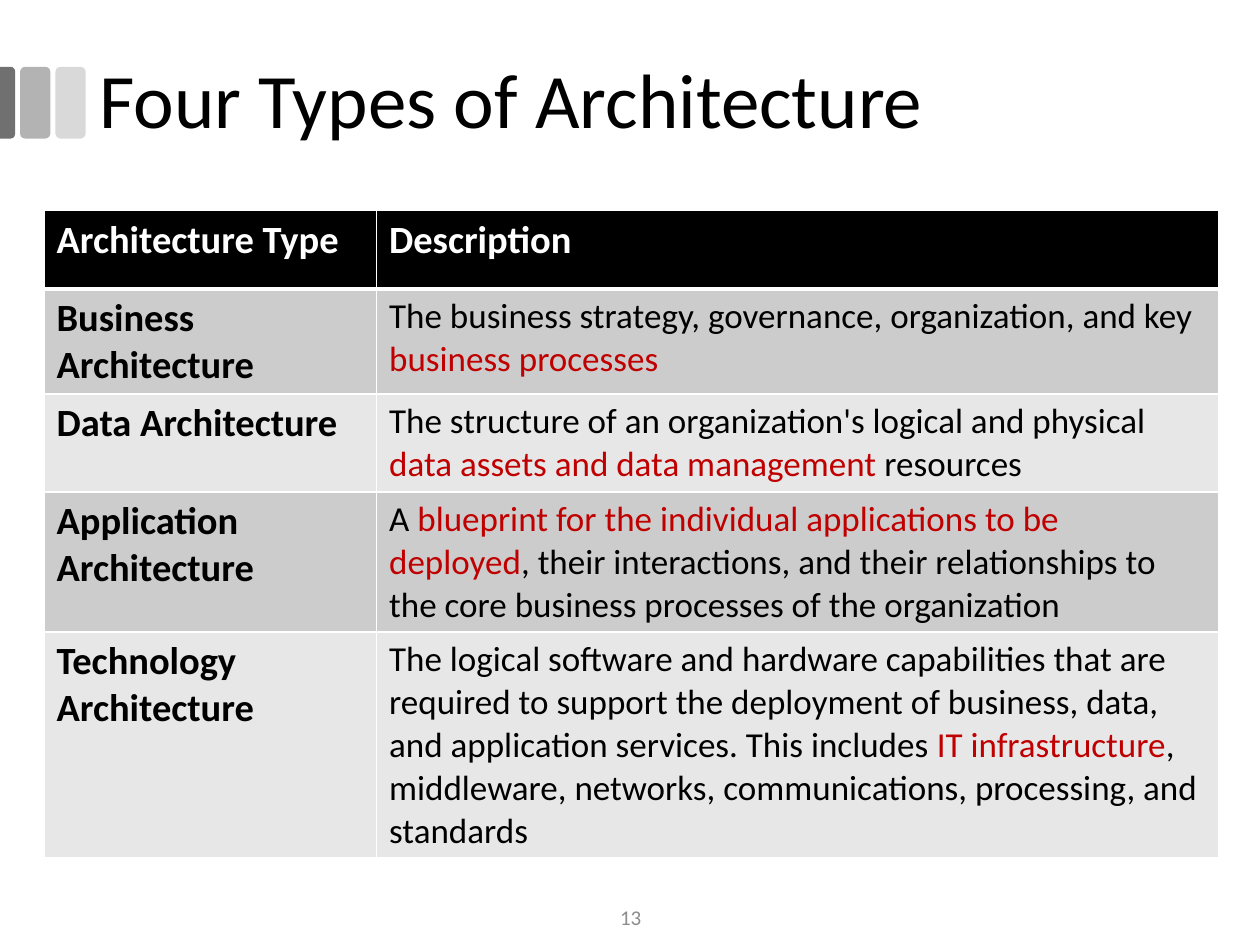
from lxml import etree
from pptx import Presentation, util as u
from pptx.dml.color import RGBColor
from pptx.enum import shapes, text
from pptx.oxml.ns import qn

TITLE = "Four Types of Architecture"
PAGE = "13"
HEADER = ("Architecture Type", "Description")
ARCHITECTURES = [
    ("Business Architecture", 60, [
        ("The business strategy, governance, organization, and key ", "ink"),
        ("business processes", "accent")]),
    ("Data Architecture", 56, [
        ("The structure of an organization's logical and physical ", "ink"),
        ("data assets and data management ", "accent"),
        ("resources", "ink")]),
    ("Application Architecture", 80, [
        ("A ", "ink"),
        ("blueprint for the individual applications to be deployed", "accent"),
        (", their interactions, and their relationships to the core business "
         "processes of the organization", "ink")]),
    ("Technology Architecture", 129, [
        ("The logical software and hardware capabilities that are required to support "
         "the deployment of business, data, and application services. This includes ", "ink"),
        ("IT infrastructure", "accent"),
        (", middleware, networks, communications, processing, and standards", "ink")]),
]
THEME = {
    "font": "Calibri",
    "colours": {"ink": "000000", "paper": "FFFFFF", "accent": "C00000", "page": "8C8C8C",
                "band0": "CCCCCC", "band1": "E7E7E7",
                "light": "D9D9D9", "middle": "B3B3B3", "dark": "707070"},
    "sizes": {"title": 44, "heading": 22, "body": 20, "page": 12},
}
HEADER_HEIGHT = 45
COLUMNS = (190, 481)
TABLE_LEFT, TABLE_TOP = 25.2, 120.2
TAB_TOP, TAB_WIDTH, TAB_HEIGHT, EDGE_WIDTH = 38.2, 17.3, 41, 8.6


def colour(role):
    return RGBColor.from_string(THEME["colours"][role])


def write(paragraph, runs, size, bold=False):
    for words, role in runs:
        run = paragraph.add_run()
        run.text = words
        style = {"name": THEME["font"], "size": u.Pt(THEME["sizes"][size]), "bold": bold}
        for key, value in style.items():
            setattr(run.font, key, value)
        run.font.color.rgb = colour(role)


def add_text(slide, box, runs, size, **layout):
    frame = slide.shapes.add_textbox(*map(u.Pt, box)).text_frame
    for key, value in {"word_wrap": True, "vertical_anchor": text.MSO_ANCHOR.MIDDLE}.items():
        setattr(frame, key, value)
    for key, value in layout.items():
        setattr(frame.paragraphs[0], key, value)
    write(frame.paragraphs[0], runs, size)


def add_tab(slide, kind, box, role):
    tab = slide.shapes.add_shape(kind, *map(u.Pt, box))
    tab.shadow.inherit = False
    tab.fill.solid()
    tab.fill.fore_color.rgb = colour(role)
    tab.line.fill.background()
    return tab


def add_borders(cell, bottom):
    properties = cell._tc.get_or_add_tcPr()
    widths = {"a:lnL": 1, "a:lnR": 1, "a:lnT": 1, "a:lnB": bottom}
    for place, (side, width) in enumerate(widths.items()):
        line = etree.Element(qn(side), w=str(u.Pt(width)))
        fill = etree.SubElement(line, qn("a:solidFill"))
        etree.SubElement(fill, qn("a:srgbClr"), val=THEME["colours"]["paper"])
        properties.insert(place, line)


def fill_cell(cell, runs, size, bold, band, bottom=1):
    cell.fill.solid()
    cell.fill.fore_color.rgb = colour(band)
    write(cell.text_frame.paragraphs[0], runs, size, bold)
    add_borders(cell, bottom)


def add_architectures(slide):
    heights = [HEADER_HEIGHT] + [height for _, height, _ in ARCHITECTURES]
    box = (TABLE_LEFT, TABLE_TOP, sum(COLUMNS), sum(heights))
    grid = slide.shapes.add_table(len(heights), len(COLUMNS), *map(u.Pt, box)).table
    for column, width in zip(grid.columns, COLUMNS):
        column.width = u.Pt(width)
    for row, height in zip(grid.rows, heights):
        row.height = u.Pt(height)
    for column, heading in enumerate(HEADER):
        fill_cell(grid.cell(0, column), [(heading, "paper")], "heading", True, "ink", 3)
    for index, (name, _, description) in enumerate(ARCHITECTURES):
        band = f"band{index % 2}"
        top = 3 if index == 0 else 1
        fill_cell(grid.cell(index + 1, 0), [(name, "ink")], "heading", True, band)
        fill_cell(grid.cell(index + 1, 1), description, "body", False, band)
        for column in range(len(COLUMNS)):
            edge = grid.cell(index + 1, column)._tc.tcPr.find(qn("a:lnT"))
            edge.set("w", str(u.Pt(top)))


def main():
    deck = Presentation()
    deck.slide_width, deck.slide_height = u.Pt(720), u.Pt(540)
    slide = deck.slides.add_slide(deck.slide_layouts[6])

    for left, role in ((31.7, "light"), (11.5, "middle")):
        add_tab(slide, shapes.MSO_SHAPE.ROUNDED_RECTANGLE,
                (left, TAB_TOP, TAB_WIDTH, TAB_HEIGHT), role)
    edge_box = ((EDGE_WIDTH - TAB_HEIGHT) / 2, TAB_TOP + (TAB_HEIGHT - EDGE_WIDTH) / 2,
                TAB_HEIGHT, EDGE_WIDTH)
    edge = add_tab(slide, shapes.MSO_SHAPE.ROUND_2_SAME_RECTANGLE, edge_box, "dark")
    edge.rotation = 90
    edge.adjustments[0] = 0.29

    add_text(slide, (49.7, 12.2, 620.6, 94.3), [(TITLE, "ink")], "title", line_spacing=0.9)
    add_architectures(slide)
    add_text(slide, (279.4, 509.8, 162, 28.8), [(PAGE, "page")], "page",
             alignment=text.PP_ALIGN.CENTER)
    deck.save("out.pptx")


if __name__ == "__main__":
    main()
